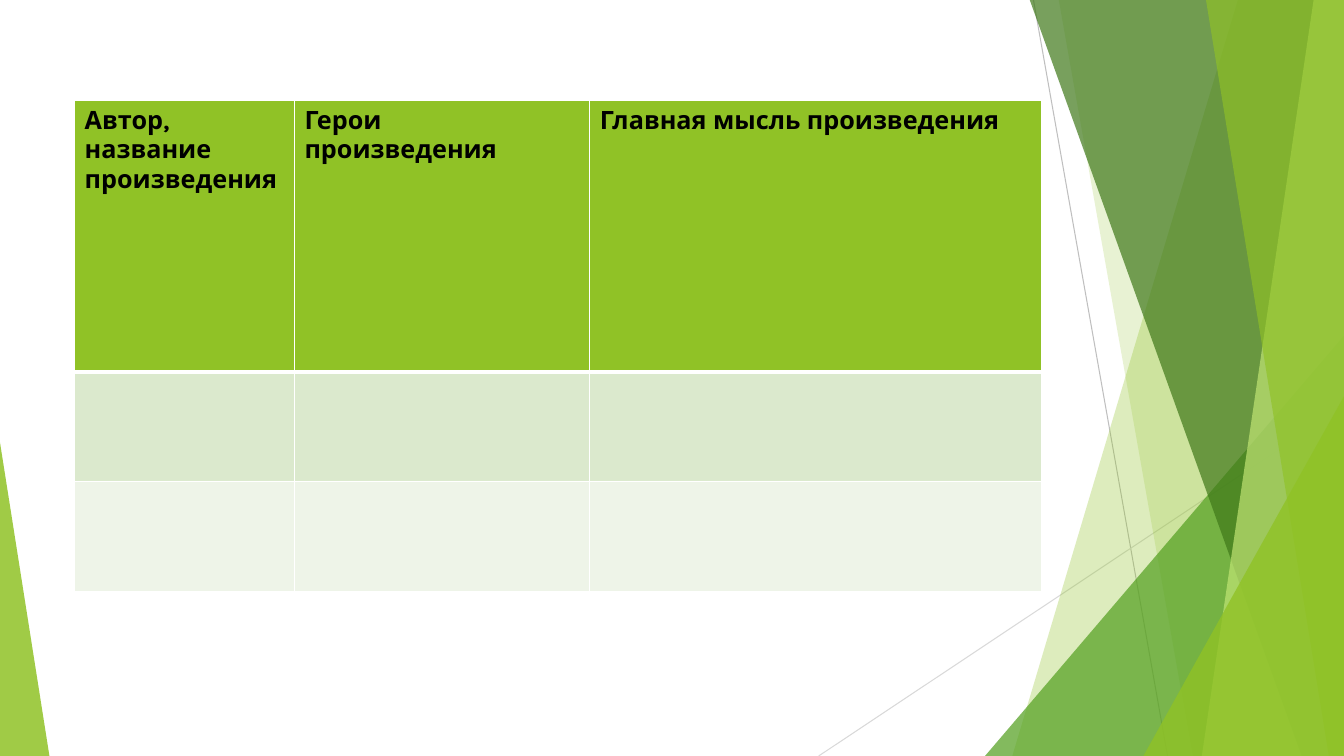
from lxml import etree
from pptx import Presentation
from pptx.dml.color import RGBColor
from pptx.enum import shapes
from pptx.oxml import ns
from pptx.util import Inches, Pt

W, H = 13.33, 7.5
TOP = -0.01
FONT = "Karla"
GREEN = "90C226"

# Content
HEADERS = ["Автор, название произведения", "Герои произведения",
           "Главная мысль произведения"]
TABLE_AT = (0.74, 1)
COLUMNS = [2.18, 2.93, 4.48]
ROWS = [(2.69, GREEN, 3), (1.09, "DBE9CD", 1), (1.09, "EEF4E8", 1)]  # height, fill, bottom line

# Decoration: from x, from y, to x, to y, colour
LINES = [(10.25, 0, 11.58, H, "BFBFBF"), (W, 4.03, 8.12, H, "D9D9D9")]
# Back to front. Band: top left x, bottom left x; wedge: left, top, width, adjustment
FACETS = [
    ("band", (12.28, 10.04), GREEN, 30),
    ("band", (10.5, 11.83), GREEN, 20),
    ("wedge", (9.77, 3.33, 3.56, 1), "54A021", 72),
    ("band", (10.21, 12.91), "3F7819", 70),
    ("band", (13.03, 11.92), "C0E474", 70),
    ("band", (11.96, 13.18), GREEN, 65),
    ("wedge", (11.34, 3.93, 1.99, 1), GREEN, 80),
    ("wedge", (0, 4.39, 0.49, 0), GREEN, 85),
]


def paint(fill, color, opacity=100):
    fill.solid()
    fill.fore_color.rgb = RGBColor.from_string(color)
    if opacity < 100:
        clr = fill._xPr.find(".//" + ns.qn("a:srgbClr"))
        etree.SubElement(clr, ns.qn("a:alpha"), val=str(opacity * 1000))


def add_band(s, top_x, bottom_x):
    points = [(W, TOP), (W, H), (bottom_x, H)]
    fb = s.shapes.build_freeform(Inches(top_x), Inches(TOP), scale=1.0)
    fb.add_line_segments([(Inches(x), Inches(y)) for x, y in points], close=True)
    return fb.convert_to_shape()


def add_wedge(s, left, top, width, adjustment):
    sp = s.shapes.add_shape(shapes.MSO_SHAPE.ISOSCELES_TRIANGLE, Inches(left),
                            Inches(top), Inches(width), Inches(H - top))
    sp.adjustments[0] = adjustment
    return sp


def add_borders(cell, bottom):
    tcPr = cell._tc.get_or_add_tcPr()
    for side, width in (("L", 1), ("R", 1), ("T", 1), ("B", bottom)):
        ln = etree.SubElement(tcPr, ns.qn("a:ln" + side), w=str(Pt(width)))
        fill = etree.SubElement(ln, ns.qn("a:solidFill"))
        etree.SubElement(fill, ns.qn("a:srgbClr"), val="FFFFFF")


prs = Presentation()
prs.slide_width, prs.slide_height = Inches(W), Inches(H)
s = prs.slides.add_slide(prs.slide_layouts[6])

# Thin lines
for x1, y1, x2, y2, color in LINES:
    line = s.shapes.add_connector(shapes.MSO_CONNECTOR.STRAIGHT, Inches(x1),
                                  Inches(y1), Inches(x2), Inches(y2))
    line.line.width = Pt(0.75)
    paint(line.line.fill, color)
    etree.SubElement(line._element.spPr, ns.qn("a:effectLst"))

# Translucent facets
for kind, place, color, opacity in FACETS:
    sp = (add_band if kind == "band" else add_wedge)(s, *place)
    paint(sp.fill, color, opacity)
    sp.line.fill.background()
    sp.shadow.inherit = False

# Table
left, top = TABLE_AT
table = s.shapes.add_table(
    len(ROWS), len(COLUMNS), Inches(left), Inches(top), Inches(sum(COLUMNS)),
    Inches(sum(row[0] for row in ROWS))).table
for column, width in zip(table.columns, COLUMNS):
    column.width = Inches(width)
for row, (height, color, bottom) in zip(table.rows, ROWS):
    row.height = Inches(height)
    for cell in row.cells:
        add_borders(cell, bottom)
        paint(cell.fill, color)
for cell, header in zip(table.rows[0].cells, HEADERS):
    r = cell.text_frame.paragraphs[0].add_run()
    r.text = header
    r.font.name, r.font.size, r.font.bold = FONT, Pt(18), True
    paint(r.font.fill, "000000")

prs.save("out.pptx")
